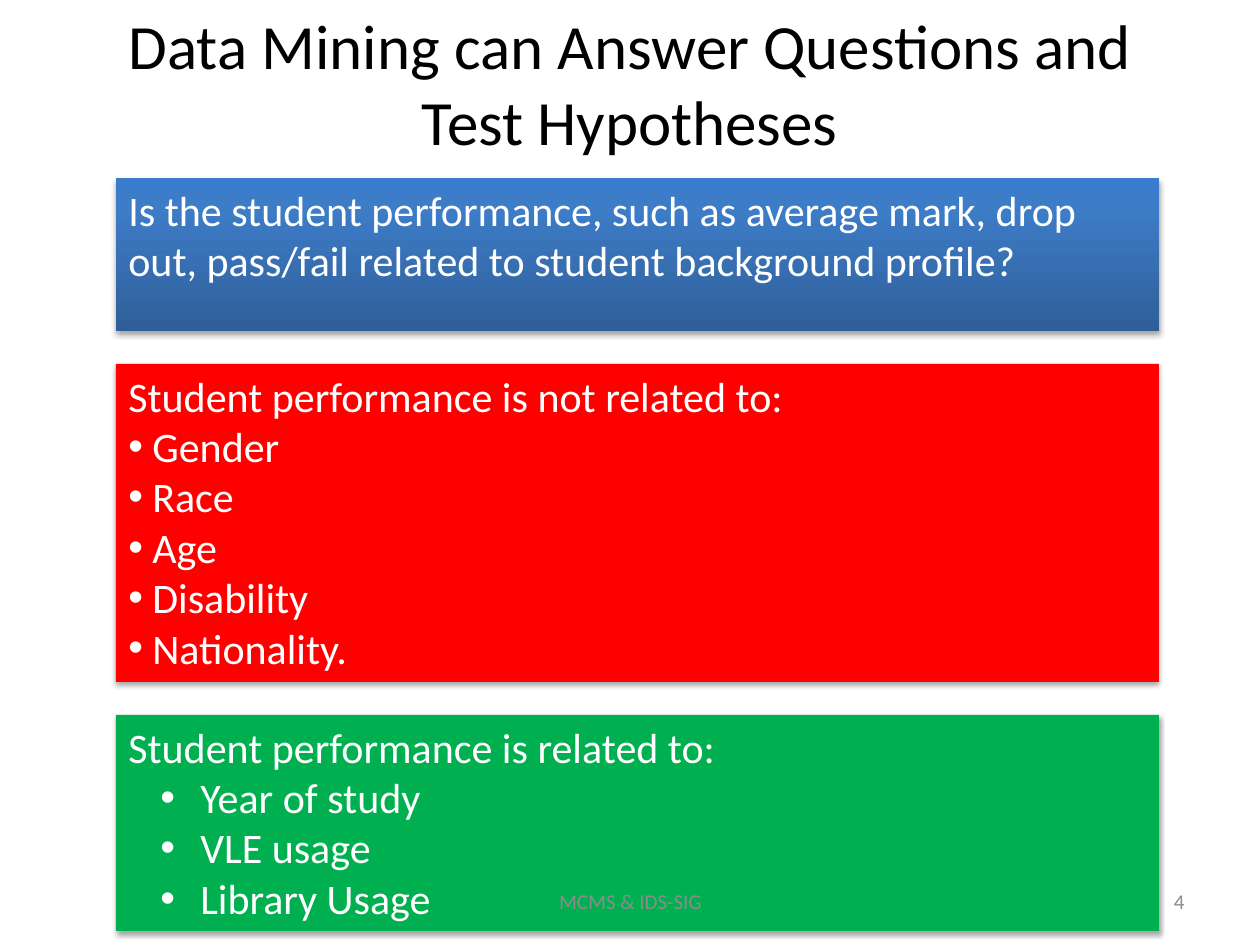
import copy
import lxml.etree
import pptx
import pptx.util
import pptx.dml.color
import pptx.enum.shapes
import pptx.enum.text
import pptx.oxml
import pptx.oxml.ns

SCALE = 914400 / 126
ALIGN = pptx.enum.text.PP_ALIGN
ANCHOR = pptx.enum.text.MSO_ANCHOR
qn = pptx.oxml.ns.qn

THEME = {
    "font": "Calibri",
    "title": {"size": 36, "color": "000000"},
    "body": {"size": 24, "color": "FFFFFF"},
    "foot": {"size": 12, "color": "8C8C8C"},
    "blue": [(0, "2F5F99"), (0.8, "3D7CC7"), (1, "3A7CCB")],
    "red": "FF0000",
    "green": "00B050",
}

SHADOW = (
    '<a:outerShdw xmlns:a="http://schemas.openxmlformats.org/drawingml/2006/main" '
    'blurRad="40000" dist="23000" dir="5400000" rotWithShape="0">'
    '<a:srgbClr val="000000"><a:alpha val="35000"/></a:srgbClr></a:outerShdw>'
)


def px(num):
    return pptx.util.Emu(round(num * SCALE))


def rgb(code):
    return pptx.dml.color.RGBColor.from_string(code)


def apply(item, form):
    for name, value in form.items():
        setattr(item, name, value)


def write(par, text, style, align=ALIGN.LEFT):
    par.alignment = align
    run = par.add_run()
    run.text = text
    apply(run.font, {"name": THEME["font"], "size": pptx.util.Pt(style["size"])})
    run.font.color.rgb = rgb(style["color"])


def bullet(par, left, hang):
    """Put the bullet `hang` px before the text, which starts at `left`."""
    props = par._p.get_or_add_pPr()
    props.set("marL", str(px(left)))
    props.set("indent", str(-px(hang)))
    lxml.etree.SubElement(props, qn("a:buFont")).set("typeface", "Arial")
    lxml.etree.SubElement(props, qn("a:buChar")).set("char", "•")


def paint(shape, fill):
    """Fill with one colour, or with stops that run from bottom to top."""
    if isinstance(fill, str):
        shape.fill.solid()
        shape.fill.fore_color.rgb = rgb(fill)
        return
    shape.fill.gradient()
    shape.fill.gradient_angle = 90
    stops = shape._element.spPr.find(".//" + qn("a:gsLst"))
    while len(stops) < len(fill):
        stops.append(copy.deepcopy(stops[-1]))
    for stop, (place, code) in zip(shape.fill.gradient_stops, fill):
        stop.position = place
        stop.color.rgb = rgb(code)


def label(slide, box, text, style, align):
    frame = slide.shapes.add_textbox(*map(px, box)).text_frame
    apply(frame, {"word_wrap": True, "vertical_anchor": ANCHOR.MIDDLE})
    write(frame.paragraphs[0], text, style, align)


def panel(slide, box, fill, head, items=(), left=0, hang=0):
    kind = pptx.enum.shapes.MSO_SHAPE.RECTANGLE
    shape = slide.shapes.add_shape(kind, *map(px, box))
    paint(shape, fill)
    shape.line.fill.background()
    shape.shadow.inherit = False
    effects = shape._element.spPr.find(qn("a:effectLst"))
    effects.append(pptx.oxml.parse_xml(SHADOW))
    frame = shape.text_frame
    apply(frame, {"word_wrap": True, "vertical_anchor": ANCHOR.TOP})
    write(frame.paragraphs[0], head, THEME["body"])
    for item in items:
        par = frame.add_paragraph()
        write(par, item, THEME["body"])
        bullet(par, left, hang)


def stack(slide, box, gap, panels):
    """Place panels of given heights down the box, with equal gaps."""
    left, top, width = box
    for high, *parts in panels:
        panel(slide, (left, top, width, high), *parts)
        top += high + gap


def main():
    deck = pptx.Presentation()
    apply(deck, {"slide_width": px(1260), "slide_height": px(945)})
    slide = deck.slides.add_slide(deck.slide_layouts[6])
    label(slide, (63, 4, 1134, 157),
          "Data Mining can Answer Questions and Test Hypotheses",
          THEME["title"], ALIGN.CENTER)
    stack(slide, (116, 178, 1043), 33, [
        (153, THEME["blue"],
         "Is the student performance, such as average mark, drop out, "
         "pass/fail related to student background profile?"),
        (318, THEME["red"], "Student performance is not related to:",
         ["Gender", "Race", "Age", "Disability", "Nationality."], 24, 24),
        (216, THEME["green"], "Student performance is related to:",
         ["Year of study", "VLE usage", "Library Usage"], 72, 40),
    ])
    label(slide, (903, 876, 294, 50), "4", THEME["foot"], ALIGN.RIGHT)
    label(slide, (431, 876, 399, 50), "MCMS & IDS-SIG", THEME["foot"],
          ALIGN.CENTER)
    deck.save("out.pptx")


if __name__ == "__main__":
    main()
